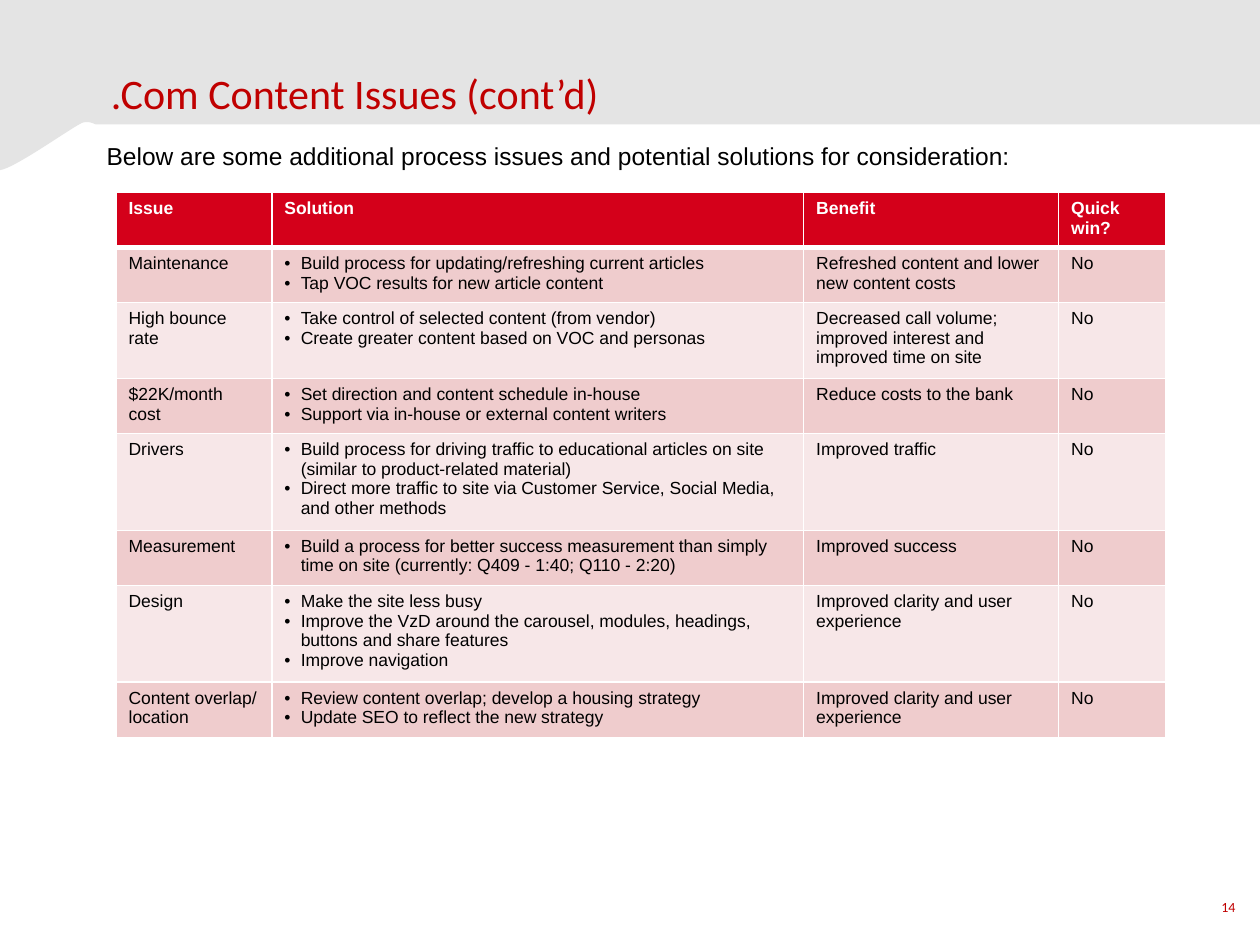
from lxml.etree import SubElement
from pptx import Presentation
from pptx.dml.color import RGBColor
from pptx.enum.text import MSO_ANCHOR, PP_ALIGN
from pptx.oxml.ns import qn
from pptx.util import Cm, Pt

COLORS = {
    "band": "E4E4E4", "accent": "C00000", "header": "D4001A",
    "dark_row": "EFCCCD", "light_row": "F7E7E8", "text": "000000", "white": "FFFFFF",
}
TITLE = ".Com Content Issues (cont’d)"
INTRO = "Below are some additional process issues and potential solutions for consideration:"
PAGE_NUMBER = "14"
HEADINGS = ["Issue", "Solution", "Benefit", "Quick win?"]
ISSUES = [
    (["Maintenance"],
     ["Build process for updating/refreshing current articles",
      "Tap VOC results for new article content"],
     ["Refreshed content and lower new content costs"], ["No"]),
    (["High bounce rate"],
     ["Take control of selected content (from vendor)",
      "Create greater content based on VOC and personas"],
     ["Decreased call volume;", "improved interest and improved time on site"], ["No"]),
    (["$22K/month", "cost"],
     ["Set direction and content schedule in-house",
      "Support via in-house or external content writers"],
     ["Reduce costs to the bank"], ["No"]),
    (["Drivers"],
     ["Build process for driving traffic to educational articles on site "
      "(similar to product-related material)",
      "Direct more traffic to site via Customer Service, Social Media, and other methods"],
     ["Improved traffic"], ["No"]),
    (["Measurement"],
     ["Build a process for better success measurement than simply time on site "
      "(currently: Q409 - 1:40; Q110 - 2:20)"],
     ["Improved success"], ["No"]),
    (["Design"],
     ["Make the site less busy",
      "Improve the VzD around the carousel, modules, headings, buttons and share features",
      "Improve navigation"],
     ["Improved clarity and user experience"], ["No"]),
    (["Content overlap/ location"],
     ["Review content overlap; develop a housing strategy",
      "Update SEO to reflect the new strategy"],
     ["Improved clarity and user experience"], ["No"]),
]
COLUMN_WIDTHS = [3.14, 10.72, 5.14, 2.16]
ROW_LINES = [2, 2, 3, 2, 4, 2, 4, 2]
TWO_LINE_HEIGHT, EXTRA_LINE_HEIGHT = 1.11, 0.42
BAND_CORNERS = [(0, 0), (25.43, 0), (25.43, 2.51), (1.93, 2.51)]
BAND_CURVES = [
    [(1.93, 2.51), (1.83, 2.46), (1.73, 2.44), (1.63, 2.49)],
    [(1.63, 2.49), (1.3, 2.67), (0.28, 3.4), (0, 3.43)],
]


def rgb(name):
    return RGBColor.from_string(COLORS[name])


def style(paragraph, font_name, size, color, bold=False):
    for run in paragraph.runs:
        run.font.name = font_name
        run.font.size = Pt(size)
        run.font.bold = bold
        run.font.color.rgb = rgb(color)


def curve_points(controls, steps=16):
    for step in range(1, steps + 1):
        t = step / steps
        weights = [(1 - t) ** 3, 3 * t * (1 - t) ** 2, 3 * t * t * (1 - t), t ** 3]
        yield tuple(sum(w * point[axis] for w, point in zip(weights, controls))
                    for axis in (0, 1))


def place(part, left, top, width, height):
    part.left, part.top, part.width, part.height = map(Cm, (left, top, width, height))


def add_band(slide):
    outline = BAND_CORNERS + [point for curve in BAND_CURVES for point in curve_points(curve)]
    points = [(Cm(x), Cm(y)) for x, y in outline]
    builder = slide.shapes.build_freeform(*points[0])
    builder.add_line_segments(points[1:], close=True)
    band = builder.convert_to_shape()
    band.shadow.inherit = False
    band.fill.solid()
    band.fill.fore_color.rgb = rgb("band")
    band.line.fill.background()
    band._element.getparent().insert(2, band._element)


def add_label(slide, text, box, font_name, size, color, align, anchor):
    frame = slide.shapes.add_textbox(*map(Cm, box)).text_frame
    frame.word_wrap = True
    frame.vertical_anchor = anchor
    frame.text = text
    frame.paragraphs[0].alignment = align
    style(frame.paragraphs[0], font_name, size, color)


def add_borders(cell, bottom_width):
    properties = cell._tc.get_or_add_tcPr()
    for side, width in (("L", 1), ("R", 1), ("T", 1), ("B", bottom_width)):
        line = SubElement(properties, qn(f"a:ln{side}"), w=str(Pt(width)))
        SubElement(SubElement(line, qn("a:solidFill")), qn("a:srgbClr"), val=COLORS["white"])


def add_bullet(paragraph):
    properties = paragraph._p.get_or_add_pPr()
    properties.set("marL", str(Cm(0.33)))
    properties.set("indent", str(-Cm(0.33)))
    SubElement(properties, qn("a:buFont"), typeface="Arial")
    SubElement(properties, qn("a:buChar"), char="•")


def fill_cell(cell, lines, fill, color, is_header, bulleted):
    add_borders(cell, 3 if is_header else 1)
    cell.fill.solid()
    cell.fill.fore_color.rgb = rgb(fill)
    cell.text_frame.text = "\n".join(lines)
    for paragraph in cell.text_frame.paragraphs:
        if bulleted:
            add_bullet(paragraph)
        style(paragraph, "Arial", 10, color, is_header)


def add_issue_table(slide):
    rows = [[[heading] for heading in HEADINGS]] + ISSUES
    heights = [TWO_LINE_HEIGHT + EXTRA_LINE_HEIGHT * (lines - 2) for lines in ROW_LINES]
    table = slide.shapes.add_table(
        len(rows), len(HEADINGS), Cm(2.34), Cm(3.88),
        Cm(sum(COLUMN_WIDTHS)), Cm(sum(heights))).table
    for column, width in zip(table.columns, COLUMN_WIDTHS):
        column.width = Cm(width)
    for row_index, (row, height) in enumerate(zip(rows, heights)):
        table.rows[row_index].height = Cm(height)
        is_header = row_index == 0
        fill = "header" if is_header else ("light_row", "dark_row")[row_index % 2]
        for column_index, lines in enumerate(row):
            fill_cell(table.cell(row_index, column_index), lines, fill,
                      "white" if is_header else "text", is_header,
                      not is_header and HEADINGS[column_index] == "Solution")


def main():
    presentation = Presentation()
    presentation.slide_width, presentation.slide_height = Cm(25.4), Cm(19.05)
    slide = presentation.slides.add_slide(presentation.slide_layouts[5])
    add_band(slide)
    title = slide.shapes.title
    place(title, 1.98, 0.1, 22.15, 2.41)
    title.text_frame.text = TITLE
    title.text_frame.vertical_anchor = MSO_ANCHOR.BOTTOM
    title.text_frame.paragraphs[0].alignment = PP_ALIGN.LEFT
    style(title.text_frame.paragraphs[0], "Calibri", 24, "accent")
    add_label(slide, PAGE_NUMBER, (24.13, 17.78, 1.27, 1.02), "Calibri", 8, "accent",
              PP_ALIGN.CENTER, MSO_ANCHOR.MIDDLE)
    add_label(slide, INTRO, (1.9, 2.72, 22.2, 0.86), "Arial", 14, "text",
              PP_ALIGN.LEFT, MSO_ANCHOR.TOP)
    add_issue_table(slide)
    presentation.save("out.pptx")


if __name__ == "__main__":
    main()
